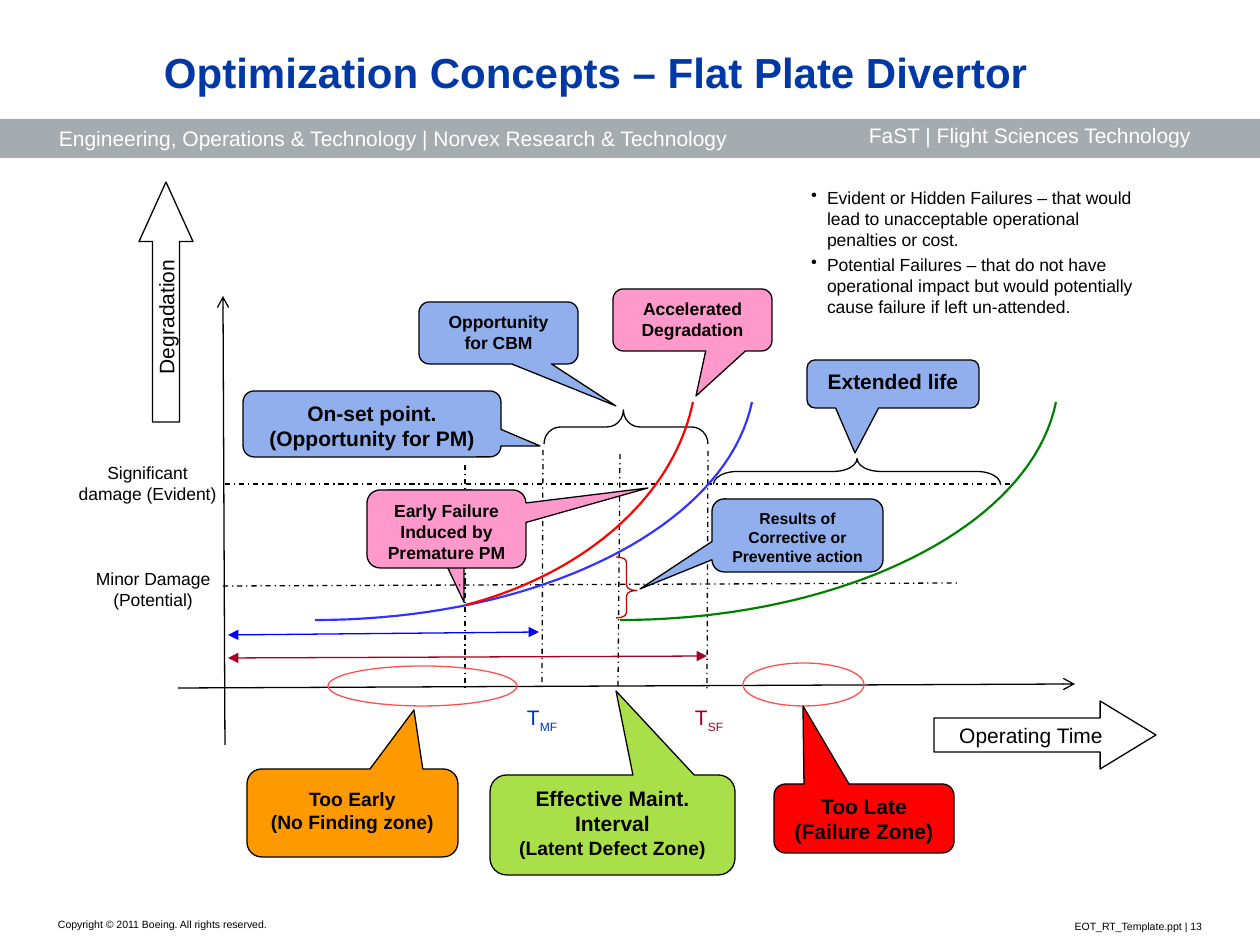
from typing import NamedTuple

from lxml.etree import SubElement
from pptx import Presentation
from pptx.dml.color import RGBColor
from pptx.enum.dml import MSO_LINE
from pptx.enum.shapes import MSO_CONNECTOR, MSO_SHAPE
from pptx.enum.text import MSO_ANCHOR, PP_ALIGN
from pptx.oxml.ns import qn
from pptx.util import Pt

PX = 914400 / 126
BLACK, WHITE, BLUE, PINK = "000000", "FFFFFF", "90AFEC", "FF99CC"
LEFT, CENTER, RIGHT = PP_ALIGN.LEFT, PP_ALIGN.CENTER, PP_ALIGN.RIGHT
TOP, MIDDLE, BOTTOM = MSO_ANCHOR.TOP, MSO_ANCHOR.MIDDLE, MSO_ANCHOR.BOTTOM
DEFAULT_INSETS = (13, 6, 13, 6)
THIN_INSETS = (1, 1, 1, 1)


class Run(NamedTuple):
    text: str
    size: float
    color: str = BLACK
    bold: bool = False
    subscript: bool = False


class Label(NamedTuple):
    box: tuple
    paragraphs: list
    align: PP_ALIGN = LEFT
    anchor: MSO_ANCHOR = TOP
    insets: tuple = DEFAULT_INSETS


class Callout(NamedTuple):
    box: tuple
    tip: tuple
    fill: str
    lines: list = []
    insets: tuple = DEFAULT_INSETS


class Line(NamedTuple):
    start: tuple
    end: tuple
    color: str = BLACK
    dashed: bool = False
    head: str = ""
    tail: str = ""


class Outline(NamedTuple):
    kind: MSO_SHAPE
    box: tuple
    adjustments: tuple = ()
    color: str = BLACK
    rotation: int = 0
    text: str = ""


class Curve(NamedTuple):
    start: tuple
    control_1: tuple
    control_2: tuple
    end: tuple
    color: str


def emu(*lengths):
    return [round(length * PX) for length in lengths]


def rgb(color: str) -> RGBColor:
    return RGBColor.from_string(color)


def write(shape, paragraphs, align=LEFT, anchor=TOP, insets=DEFAULT_INSETS, wrap=True):
    frame = shape.text_frame
    frame.word_wrap = wrap
    frame.vertical_anchor = anchor
    (frame.margin_left, frame.margin_top,
     frame.margin_right, frame.margin_bottom) = emu(*insets)
    for index, runs in enumerate(paragraphs):
        paragraph = frame.add_paragraph() if index else frame.paragraphs[0]
        paragraph.alignment = align
        for item in runs:
            run = paragraph.add_run()
            run.text = item.text
            run.font.name = "Arial"
            run.font.size = Pt(item.size)
            run.font.bold = item.bold
            run.font.color.rgb = rgb(item.color)
            if item.subscript:
                run.font._element.set("baseline", "-25000")


def add_label(slide, label: Label):
    shape = slide.shapes.add_textbox(*emu(*label.box))
    write(shape, label.paragraphs, label.align, label.anchor, label.insets)
    return shape


def add_bullets(shape):
    for index, paragraph in enumerate(shape.text_frame.paragraphs):
        properties = paragraph._p.get_or_add_pPr()
        indent = emu(16)[0]
        properties.set("marL", str(indent))
        properties.set("indent", str(-indent))
        SubElement(properties, qn("a:buChar")).set("char", "•")
        if index:
            paragraph.space_before = Pt(2)


def add_shape(slide, kind, box, fill="", line="", adjustments=()):
    shape = slide.shapes.add_shape(kind, *emu(*box))
    shape.shadow.inherit = False
    style(shape, fill, line)
    for index, value in enumerate(adjustments):
        shape.adjustments[index] = value
    return shape


def style(shape, fill: str, line: str, width: float = 0.75):
    if fill:
        shape.fill.solid()
        shape.fill.fore_color.rgb = rgb(fill)
    else:
        shape.fill.background()
    if line:
        shape.line.color.rgb = rgb(line)
        shape.line.width = Pt(width)
    else:
        shape.line.fill.background()


def add_callout(slide, callout: Callout):
    """Place the tail's tip by its offset from the centre, as a share of the size."""
    left, top, width, height = callout.box
    offset = ((callout.tip[0] - left) / width - 0.5, (callout.tip[1] - top) / height - 0.5)
    shape = add_shape(slide, MSO_SHAPE.ROUNDED_RECTANGULAR_CALLOUT, callout.box,
                      callout.fill, BLACK, (*offset, 0.167))
    write(shape, [[Run(text, size, bold=True)] for text, size in callout.lines],
          CENTER, insets=callout.insets)


def add_outline(slide, outline: Outline):
    shape = add_shape(slide, outline.kind, outline.box, "", outline.color, outline.adjustments)
    shape.rotation = outline.rotation
    if outline.text:
        write(shape, [[Run(outline.text, 12)]], CENTER, MIDDLE, wrap=False)


def add_line(slide, line: Line):
    connector = slide.shapes.add_connector(
        MSO_CONNECTOR.STRAIGHT, *emu(*line.start, *line.end))
    connector.line.color.rgb = rgb(line.color)
    connector.line.width = Pt(0.75)
    if line.dashed:
        connector.line.dash_style = MSO_LINE.DASH_DOT
    for tag, kind in (("a:headEnd", line.head), ("a:tailEnd", line.tail)):
        if kind:
            SubElement(connector.line._get_or_add_ln(), qn(tag)).set("type", kind)
    SubElement(connector._element.spPr, qn("a:effectLst"))


def add_curve(slide, curve: Curve, steps: int = 40):
    """Draw a cubic Bezier curve as a fine open polyline."""
    points = []
    for step in range(steps + 1):
        t = step / steps
        weights = ((1 - t) ** 3, 3 * t * (1 - t) ** 2, 3 * t * t * (1 - t), t ** 3)
        points.append(tuple(sum(w * p[axis] for w, p in zip(weights, curve[:4]))
                            for axis in (0, 1)))
    builder = slide.shapes.build_freeform(
        round(points[0][0] * 100), round(points[0][1] * 100), scale=PX / 100)
    builder.add_line_segments([(round(x * 100), round(y * 100)) for x, y in points[1:]], close=False)
    shape = builder.convert_to_shape()
    shape.shadow.inherit = False
    style(shape, "", curve.color, 1.25)


LABELS = [
    Label((164, 52, 1000, 45), [[Run("Optimization Concepts – Flat Plate Divertor", 24, "0039A6", True)]],
          anchor=BOTTOM, insets=(0, 0, 0, 0)),
    Label((57, 917, 285, 15), [[Run("Copyright © 2011 Boeing. All rights reserved.", 6)]],
          anchor=BOTTOM, insets=THIN_INSETS),
    Label((630, 117, 630, 38), [[Run("FaST | Flight Sciences Technology", 12, WHITE)]],
          RIGHT, insets=(63, 6, 69, 6)),
    Label((958, 900, 245, 34), [[Run("EOT_RT_Template.ppt | 13", 6)]], RIGHT, BOTTOM, THIN_INSETS),
    Label((514, 699, 60, 38), [[Run("T", 12, "0033CC"), Run("MF", 12, "0033CC", subscript=True)]]),
    Label((682, 699, 60, 38), [[Run("T", 12, "A50021"), Run("SF", 12, "A50021", subscript=True)]]),
    Label((62, 456, 171, 54), [[Run("Significant damage (Evident)", 10)]], CENTER),
    Label((81, 562, 144, 55), [[Run("Minor Damage (Potential)", 10)]], CENTER),
]
FAILURE_KINDS = Label((798, 181, 358, 142), [
    [Run("Evident or Hidden Failures – that would lead to unacceptable operational "
         "penalties or cost.", 10)],
    [Run("Potential Failures – that do not have operational impact but would potentially "
         "cause failure if left un-attended.", 10)]])
LINES = [
    Line((178, 688), (1075, 684), tail="arrow"),
    Line((223, 296), (225, 745), head="arrow"),
    Line((223, 586), (958, 583), dashed=True),
    Line((225, 484), (1014, 484), dashed=True),
    Line((465, 465), (465, 687), dashed=True),
    Line((543, 450), (542, 683), dashed=True),
    Line((620, 454), (618, 687), dashed=True),
    Line((708, 451), (707, 689), dashed=True),
    Line((228, 635), (539, 632), "0000FF", head="triangle", tail="triangle"),
    Line((228, 658), (707, 656), "A50021", head="triangle", tail="triangle"),
]
OUTLINES = [
    Outline(MSO_SHAPE.RIGHT_ARROW, (934, 701, 222, 68), (0.5, 0.821), text="Operating Time"),
    Outline(MSO_SHAPE.RIGHT_ARROW, (46, 275, 240, 54), (0.5, 1.102), rotation=270, text="Degradation"),
    Outline(MSO_SHAPE.OVAL, (328, 666, 189, 40), color="FF5050"),
    Outline(MSO_SHAPE.OVAL, (743, 663, 121, 43), color="FF5050"),
    Outline(MSO_SHAPE.LEFT_BRACE, (609, 345, 34, 164), (0.481, 0.516), rotation=90),
    Outline(MSO_SHAPE.LEFT_BRACE, (844, 328, 26, 287), (0.914, 0.5), rotation=90),
    Outline(MSO_SHAPE.RIGHT_BRACE, (616, 557, 21, 61), (0.242, 0.55), "CC0000"),
]
CURVES = [
    Curve((315, 620), (539, 620), (726, 527), (752, 402), "3333FF"),
    Curve((620, 620), (843, 620), (1031, 527), (1056, 402), "008000"),
    Curve((466, 605), (587, 573), (674, 495), (693, 402), "FF0000"),
]
EARLY_FAILURE_TAIL = Callout((379, 490, 102, 58), (464, 602), PINK)
CALLOUTS = [
    Callout((243, 391, 258, 66), (540, 446), BLUE, [("On-set point.", 12), ("(Opportunity for PM)", 12)]),
    Callout((490, 775, 245, 100), (616, 691), "A9DF49",
            [("Effective Maint. Interval", 12), ("(Latent Defect Zone)", 11)]),
    Callout((247, 769, 211, 88), (414, 710), "FF9900",
            [("Too Early", 11), ("(No Finding zone)", 11)], (13, 14, 13, 6)),
    Callout((774, 784, 180, 69), (803, 706), "FF0000", [("Too Late", 12), ("(Failure Zone)", 12)]),
    Callout((419, 302, 159, 62), (616, 406), BLUE, [("Opportunity for CBM", 10)]),
    Callout((807, 360, 172, 48), (855, 453), BLUE, [("Extended life", 12)]),
    Callout((712, 499, 171, 73), (640, 589), BLUE, [("Results of Corrective or Preventive action", 9)]),
    Callout((613, 289, 159, 62), (696, 396), PINK, [("Accelerated Degradation", 10)]),
    Callout((367, 490, 159, 78), (648, 488), PINK, [("Early Failure Induced by Premature PM", 10)]),
]


def main():
    presentation = Presentation()
    presentation.slide_width, presentation.slide_height = emu(1260, 945)
    slide = presentation.slides.add_slide(presentation.slide_layouts[6])
    band = add_shape(slide, MSO_SHAPE.RECTANGLE, (0, 119, 1260, 39), "A5ACB0")
    write(band, [[Run("Engineering, Operations & Technology | Norvex Research & Technology", 12, WHITE)]],
          LEFT, MIDDLE, (59, 0, 0, 0))
    add_callout(slide, EARLY_FAILURE_TAIL)
    for add, items in ((add_line, LINES), (add_outline, OUTLINES), (add_curve, CURVES),
                       (add_label, LABELS), (add_callout, CALLOUTS)):
        for item in items:
            add(slide, item)
    add_bullets(add_label(slide, FAILURE_KINDS))
    presentation.save("out.pptx")


if __name__ == "__main__":
    main()
